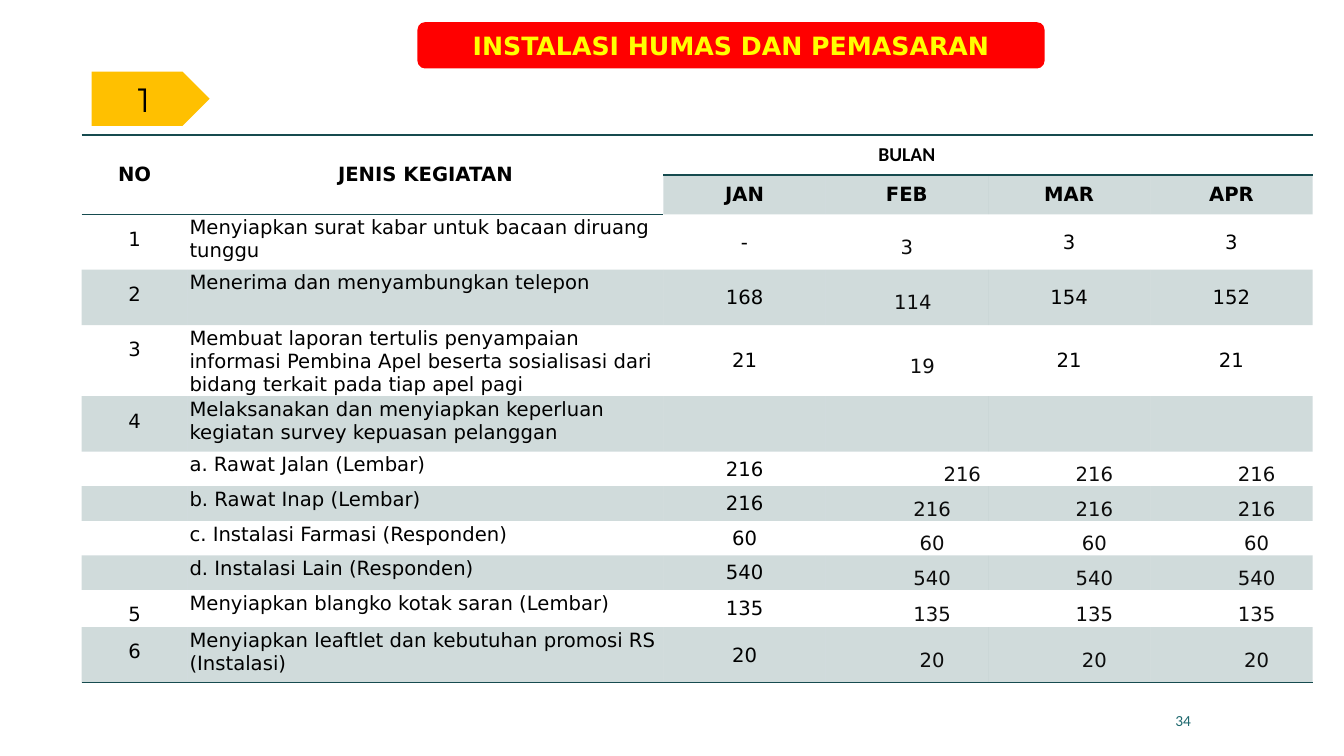
from lxml import etree
from pptx import Presentation
from pptx.dml.color import RGBColor
from pptx.enum import shapes, text
from pptx.oxml import ns
from pptx.util import Inches, Pt


class Theme:
    teal, slate = "164B4F", "1F696F"
    black, ink = "000000", "0C0C0C"
    red, yellow, amber = "FF0000", "FFFF00", "FFC000"
    body, plain, display = "DejaVu Sans", "Calibri", "Montserrat"
    title_size, badge_size, table_size, number_size = 18, 24, 14, 11


CENTER, LEFT, RIGHT = text.PP_ALIGN.CENTER, text.PP_ALIGN.LEFT, text.PP_ALIGN.RIGHT
MIDDLE, TOP = text.MSO_ANCHOR.MIDDLE, text.MSO_ANCHOR.TOP


def write(frame, wording, size, color, font=Theme.body, bold=False, align=CENTER):
    frame.word_wrap = True
    paragraph = frame.paragraphs[0]
    paragraph.alignment = align
    run = paragraph.add_run()
    run.text = wording
    run.font.size, run.font.name, run.font.bold = Pt(size), font, bold
    run.font.color.rgb = RGBColor.from_string(color)
    return paragraph


def rule(cell, edge):
    """Draw a teal 1 pt line on one edge (lnT or lnB) of a table cell."""
    line = etree.SubElement(cell._tc.get_or_add_tcPr(), ns.qn(f"a:{edge}"), w=str(Pt(1)))
    fill = etree.SubElement(line, ns.qn("a:solidFill"))
    etree.SubElement(fill, ns.qn("a:srgbClr"), val=Theme.teal)


prs = Presentation()
prs.slide_width, prs.slide_height = Inches(13.33), Inches(7.5)
slide = prs.slides.add_slide(prs.slide_layouts[5])

# Title on its red bar, and the section badge
title = slide.shapes.title
title_place = [Inches(v) for v in (4.14, 0.22, 6.22, 0.46)]
title.left, title.top, title.width, title.height = title_place
title.text_frame.auto_size = text.MSO_AUTO_SIZE.NONE
title.text_frame.vertical_anchor = MIDDLE
write(title.text_frame, "INSTALASI HUMAS DAN PEMASARAN", Theme.title_size, Theme.yellow, bold=True)

bar = slide.shapes.add_shape(shapes.MSO_SHAPE.ROUNDED_RECTANGLE, *title_place)
badge = slide.shapes.add_shape(
    shapes.MSO_SHAPE.PENTAGON, Inches(0.91), Inches(0.71), Inches(1.17), Inches(0.54))
for shape, color in ((bar, Theme.red), (badge, Theme.amber)):
    shape.shadow.inherit = False
    shape.fill.solid()
    shape.fill.fore_color.rgb = RGBColor.from_string(color)
    shape.line.fill.background()
title.element.addprevious(bar.element)
badge.text_frame.vertical_anchor = MIDDLE
write(badge.text_frame, "1", Theme.badge_size, Theme.black, Theme.display)

# Activity table
months = ["JAN", "FEB", "MAR", "APR"]
activities = [
    ("1", "Menyiapkan surat kabar untuk bacaan diruang tunggu", "-", "3", "3", "3"),
    ("2", "Menerima dan menyambungkan telepon", "168", "114", "154", "152"),
    ("3", "Membuat laporan tertulis penyampaian informasi Pembina Apel beserta "
          "sosialisasi dari bidang terkait pada tiap apel pagi", "21", "19", "21", "21"),
    ("4", "Melaksanakan dan menyiapkan keperluan kegiatan survey kepuasan pelanggan",
     "", "", "", ""),
    ("", "a. Rawat Jalan (Lembar)", *["216"] * 4),
    ("", "b. Rawat Inap (Lembar)", *["216"] * 4),
    ("", "c. Instalasi Farmasi (Responden)", *["60"] * 4),
    ("", "d. Instalasi Lain (Responden)", *["540"] * 4),
    ("5", "Menyiapkan blangko kotak saran (Lembar)", *["135"] * 4),
    ("6", "Menyiapkan leaftlet dan kebutuhan promosi RS (Instalasi)", *["20"] * 4),
]
rows = [("NO", "JENIS KEGIATAN", "BULAN", "", "", ""), ("", "", *months), *activities]
column_widths = [1.05, 4.72] + [1.61] * 4
row_heights = [0.38, 0.38, 0.55, 0.55, 0.7, 0.55] + [0.34] * 4 + [0.37, 0.55]
FEB, FIRST_SURVEY, LAST = 3, 6, len(rows) - 1
feb_indents = {2: 0, 3: 0.12, 4: 0.26, FIRST_SURVEY: 0.07}

table_frame = slide.shapes.add_table(
    len(rows), len(column_widths), Inches(0.81), Inches(1.34),
    Inches(sum(column_widths)), Inches(sum(row_heights)))
table = table_frame.table
table.first_row = table.horz_banding = False
table._tbl.tblPr.find(ns.qn("a:tableStyleId")).text = "{2D5ABB26-0587-4C30-8999-92F81FD0307C}"
for column, width in zip(table.columns, column_widths):
    column.width = Inches(width)
for row, height in zip(table.rows, row_heights):
    row.height = Inches(height)

for r, row in enumerate(rows):
    for c, wording in enumerate(row):
        cell = table.cell(r, c)
        if r == 0:
            rule(cell, "lnT")
        if r in (0, LAST) or (r == 1 and c < 2):
            rule(cell, "lnB")
        if r % 2 and (r > 1 or c > 1):
            cell.fill.solid()
            cell.fill.fore_color.rgb = RGBColor.from_string(Theme.teal)
            tint = cell._tc.tcPr.find(".//" + ns.qn("a:solidFill") + "[last()]/../" +
                                      ns.qn("a:solidFill") + "/" + ns.qn("a:srgbClr")) \
                if r != LAST else cell._tc.tcPr.findall(ns.qn("a:solidFill"))[0][0]
            etree.SubElement(tint, ns.qn("a:alpha"), val="20000")
        else:
            cell.fill.background()

        header = r < 2
        indented = not header and (c == FEB or (c > FEB and r >= FIRST_SURVEY))
        if header:
            insets, cell.vertical_anchor = (0.2, 0.08, 0.2, 0.08), MIDDLE
        elif c < 2:
            insets, cell.vertical_anchor = (0.02, 0.02, 0.02, 0), TOP
        else:
            insets = (0.07, 0, 0.07, 0) if indented else (0.01, 0.01, 0.01, 0)
            cell.vertical_anchor = MIDDLE
        cell.margin_left, cell.margin_top, cell.margin_right, cell.margin_bottom = map(Inches, insets)

        if not wording:
            blank = cell.text_frame.paragraphs[0]._p
            etree.SubElement(blank, ns.qn("a:endParaRPr"), sz=str(Theme.table_size * 100))
            continue
        align = CENTER
        if not header and c == 1:
            align = LEFT
        elif (r, c) == (FIRST_SURVEY, FEB):
            align = RIGHT
        paragraph = write(
            cell.text_frame, wording, Theme.table_size, Theme.ink if indented else Theme.black,
            Theme.plain if wording == "BULAN" else Theme.body, header, align)
        if indented or (c == 0 and not header):
            paragraph.line_spacing = 1.5
        if indented:
            indent = feb_indents.get(r, 0.5) if c == FEB else 0.5
            properties = paragraph._p.get_or_add_pPr()
            properties.set("marL", str(Inches(indent)))
            properties.set("indent", str(Inches(0.05 if (r, c) == (4, FEB) else 0)))

table.cell(0, 0).merge(table.cell(1, 0))
table.cell(0, 1).merge(table.cell(1, 1))
table.cell(0, 2).merge(table.cell(0, 4))

# Slide number
page_number = slide.shapes.add_textbox(Inches(8.8), Inches(6.95), Inches(3.11), Inches(0.4))
page_number.text_frame.vertical_anchor = MIDDLE
write(page_number.text_frame, "34", Theme.number_size, Theme.slate, Theme.plain, align=RIGHT)

prs.save("out.pptx")
